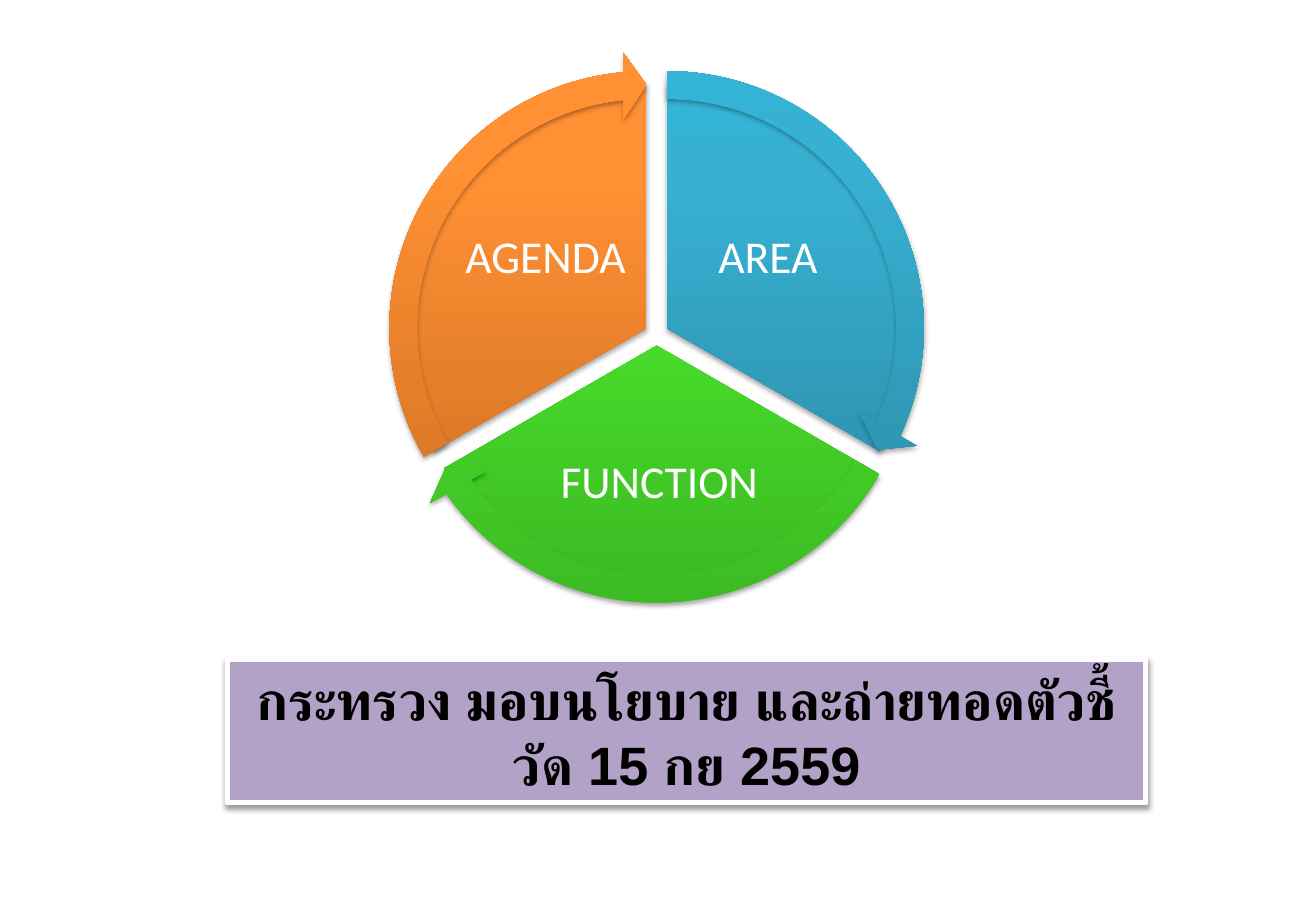
"""Build a slide with a three-part policy cycle above a banner."""
from copy import deepcopy
from math import cos, radians, sin

from lxml.etree import SubElement
from pptx import Presentation
from pptx.dml.color import RGBColor
from pptx.enum.shapes import MSO_SHAPE as Shape
from pptx.enum.text import MSO_ANCHOR as Anchor, PP_ALIGN as Align
from pptx.oxml.ns import qn
from pptx.util import Inches, Pt

WIDTH, HEIGHT = Inches(10.83), Inches(7.5)
COLOURS = {
    "banner": "B3A2C7", "white": "FFFFFF", "black": "000000",
    "area": ("2A88A2", "37B1D2", "34B4D6"),
    "function": ("3CB923", "4EF02E", "4CF52A"),
    "agenda": ("CC6E20", "FF9034", "FF9136"),
}
STOPS = (0, 0.8, 1)
BANNER = "กระทรวง มอบนโยบาย และถ่ายทอดตัวชี้วัด 15 กย 2559"
BANNER_BOX = (17.27, 72.4, 69.81, 15.73)
SECTORS = [
    ("AREA", "area", 270, (51.7, 20.4, 13.3, 16)),
    ("FUNCTION", "function", 30, (40.07, 46, 20.04, 14.13)),
    ("AGENDA", "agenda", 150, (34.8, 20.4, 13.3, 16)),
]
SWEEP = 120
CENTRE_X, CENTRE_Y = WIDTH * 0.499, HEIGHT * 36.67 / 100
PIE_SIZE, ARROW_SIZE, SPREAD = (HEIGHT * share / 100 for share in (53.87, 60.67, 1.28))
ARROW_WIDTH, ARROW_HEAD, ARROW_TIP = 0.05, 3.28, 0.06
ANGLE_UNIT = 0.6


def place(share):
    left, top, width, height = share
    return [int(part * side / 100) for part, side in
            zip((left, top, width, height), (WIDTH, HEIGHT, WIDTH, HEIGHT))]


def add_shadow(shape, opacity, distance):
    effects = SubElement(shape._element.spPr, qn("a:effectLst"))
    shadow = SubElement(effects, qn("a:outerShdw"), blurRad=str(Pt(3.1)),
                        dist=str(Pt(distance)), dir="5400000", rotWithShape="0")
    colour = SubElement(shadow, qn("a:srgbClr"), val=COLOURS["black"])
    SubElement(colour, qn("a:alpha"), val=str(opacity * 1000))


def fill_gradient(shape, colours):
    shape.fill.gradient()
    shape.fill.gradient_angle = 90
    first = shape._element.spPr.find(".//" + qn("a:gs"))
    first.addnext(deepcopy(first))
    for stop, position, colour in zip(shape.fill.gradient_stops, STOPS, colours):
        stop.position = position
        stop.color.rgb = RGBColor.from_string(colour)


def write(shape, text, font, size, colour, bold=False):
    frame = shape.text_frame
    frame.word_wrap = True
    frame.vertical_anchor = Anchor.MIDDLE
    para = frame.paragraphs[0]
    para.alignment = Align.CENTER
    span = para.add_run()
    span.text = text
    span.font.name, span.font.size, span.font.bold = font, Pt(size), bold
    span.font.color.rgb = RGBColor.from_string(colour)
    SubElement(span.font._element, qn("a:cs"), typeface=font)
    return frame, para


def add_sector_part(page, kind, size, start, colours, adjustments):
    middle = radians(start + SWEEP / 2)
    left = CENTRE_X + SPREAD * cos(middle) - size / 2
    top = CENTRE_Y + SPREAD * sin(middle) - size / 2
    shape = page.shapes.add_shape(kind, int(left), int(top), int(size), int(size))
    for index, value in enumerate(adjustments):
        shape.adjustments[index] = value
    fill_gradient(shape, colours)
    shape.line.fill.background()
    add_shadow(shape, 35, 1.8)


def add_label(page, text, share):
    box = page.shapes.add_textbox(*place(share))
    frame, para = write(box, text, "Calibri", 27, COLOURS["white"])
    frame.margin_left = frame.margin_right = Inches(0.04)
    frame.margin_top = frame.margin_bottom = Inches(0.04)
    para.line_spacing = 0.9


def add_banner(page):
    banner = page.shapes.add_shape(Shape.RECTANGLE, *place(BANNER_BOX))
    banner.fill.solid()
    banner.fill.fore_color.rgb = RGBColor.from_string(COLOURS["banner"])
    banner.line.color.rgb = RGBColor.from_string(COLOURS["white"])
    banner.line.width = Pt(3)
    add_shadow(banner, 38, 1.6)
    write(banner, BANNER, "Arial", 32, COLOURS["black"], True)


def main():
    deck = Presentation()
    deck.slide_width, deck.slide_height = WIDTH, HEIGHT
    page = deck.slides.add_slide(deck.slide_layouts[6])
    add_banner(page)
    for text, key, start, share in SECTORS:
        end = (start + SWEEP) % 360
        add_sector_part(page, Shape.PIE, PIE_SIZE, start, COLOURS[key],
                        (start * ANGLE_UNIT, end * ANGLE_UNIT))
        add_label(page, text, share)
    for text, key, start, share in SECTORS:
        tip = (start + SWEEP) % 360 * ANGLE_UNIT - ARROW_HEAD
        add_sector_part(page, Shape.CIRCULAR_ARROW, ARROW_SIZE, start, COLOURS[key],
                        (ARROW_WIDTH, ARROW_HEAD, tip, start * ANGLE_UNIT, ARROW_TIP))
    deck.save("out.pptx")


if __name__ == "__main__":
    main()
